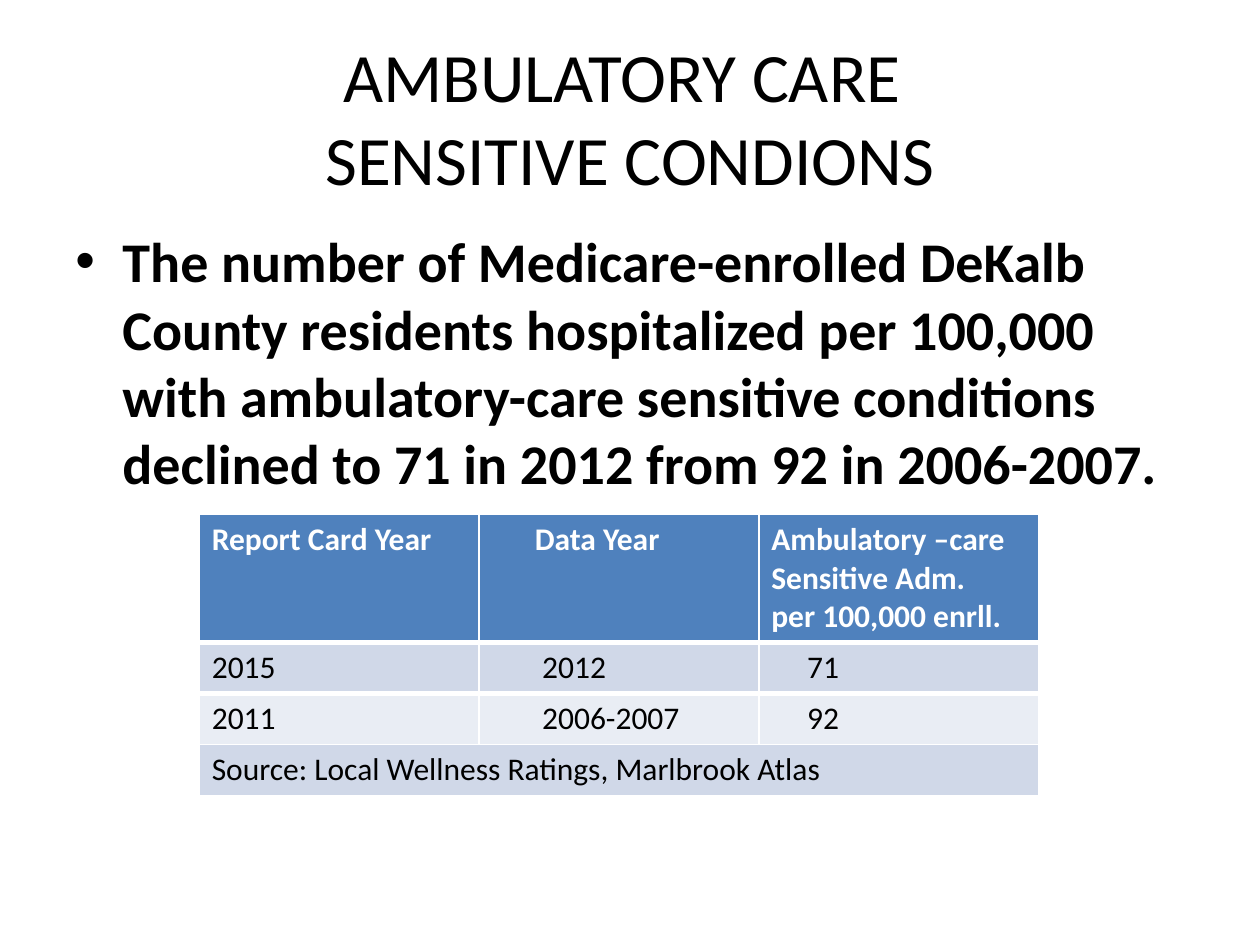
from dataclasses import dataclass

from lxml.etree import SubElement
from pptx import Presentation
from pptx.dml.color import RGBColor
from pptx.enum.text import MSO_ANCHOR, PP_ALIGN
from pptx.oxml.ns import qn
from pptx.util import Cm, Pt


@dataclass(frozen=True)
class Theme:
    font: str = "Calibri"
    title_size: float = 39.6
    body_size: float = 32
    table_size: float = 18
    ink: str = "000000"
    header_ink: str = "FFFFFF"
    header_fill: str = "4F81BD"
    rule_color: str = "FFFFFF"
    rule_width: float = 3
    band_fills: tuple[str, str] = ("D0D8E8", "E9EDF4")


@dataclass(frozen=True)
class Column:
    heading: str
    heading_indent: float
    value_indent: float
    values: tuple[str, ...]


THEME = Theme()
COLUMNS = (
    Column("Report Card Year", 0.25, 0.25, ("2015", "2011")),
    Column("Data Year", 1.12, 1.27, ("2012", "2006-2007")),
    Column("Ambulatory –care\nSensitive Adm.\vper 100,000 enrll.", 0.25, 0.97, ("71", "92")),
)
SOURCE = "Source: Local Wellness Ratings, Marlbrook Atlas"
COLUMN_WIDTH, ROW_HEIGHT, HEADER_HEIGHT = 5.64, 1.03, 2.58


def style_text(frame, size: float, color: str, bold: bool = False) -> None:
    for paragraph in frame.paragraphs:
        paragraph.font.name = THEME.font
        paragraph.font.size = Pt(size)
        paragraph.font.bold = bold
        paragraph.font.color.rgb = RGBColor.from_string(color)


def add_text(slide, top: float, height: float, text: str, size: float, bold: bool = False):
    frame = slide.shapes.add_textbox(Cm(1.27), Cm(top), Cm(22.86), Cm(height)).text_frame
    frame.word_wrap = True
    frame.text = text
    style_text(frame, size, THEME.ink, bold)
    return frame


def add_bullet(paragraph, indent: float) -> None:
    properties = paragraph._p.get_or_add_pPr()
    properties.set("marL", str(Cm(indent)))
    properties.set("indent", str(-Cm(indent)))
    text_defaults = properties.find(qn("a:defRPr"))
    SubElement(properties, qn("a:buFont")).set("typeface", "Arial")
    SubElement(properties, qn("a:buChar")).set("char", "•")
    properties.append(text_defaults)


def add_rule(cell, side: str) -> None:
    properties = cell._tc.get_or_add_tcPr()
    line = SubElement(properties, qn(f"a:{side}"))
    line.set("w", str(Pt(THEME.rule_width)))
    SubElement(SubElement(line, qn("a:solidFill")), qn("a:srgbClr")).set("val", THEME.rule_color)
    properties.insert(0, line)


def fill_cell(cell, text: str, indent: float, fill: str, color: str, bold: bool = False) -> None:
    cell.text = text
    cell.margin_left = Cm(indent)
    cell.fill.solid()
    cell.fill.fore_color.rgb = RGBColor.from_string(fill)
    style_text(cell.text_frame, THEME.table_size, color, bold)


def add_admissions_table(slide) -> None:
    value_rows = len(COLUMNS[0].values)
    source_row = value_rows + 1
    table = slide.shapes.add_table(
        source_row + 1, len(COLUMNS), Cm(4.02), Cm(10.37),
        Cm(COLUMN_WIDTH * len(COLUMNS)), Cm(HEADER_HEIGHT + ROW_HEIGHT * source_row),
    ).table
    for index, row in enumerate(table.rows):
        row.height = Cm(ROW_HEIGHT if index else HEADER_HEIGHT)
    for index, column in enumerate(COLUMNS):
        table.columns[index].width = Cm(COLUMN_WIDTH)
        fill_cell(table.cell(0, index), column.heading, column.heading_indent,
                  THEME.header_fill, THEME.header_ink, bold=True)
        for row, value in enumerate(column.values, start=1):
            fill_cell(table.cell(row, index), value, column.value_indent,
                      THEME.band_fills[(row - 1) % 2], THEME.ink)
        add_rule(table.cell(0, index), "lnB")
        add_rule(table.cell(1, index), "lnT")
    source = table.cell(source_row, 0)
    source.merge(table.cell(source_row, len(COLUMNS) - 1))
    fill_cell(source, SOURCE, 0.25, THEME.band_fills[value_rows % 2], THEME.ink)


def main() -> None:
    presentation = Presentation()
    presentation.slide_width, presentation.slide_height = Cm(25.4), Cm(19.05)
    slide = presentation.slides.add_slide(presentation.slide_layouts[6])

    title = add_text(slide, 0.76, 3.18, "AMBULATORY CARE \vSENSITIVE CONDIONS", THEME.title_size)
    title.vertical_anchor = MSO_ANCHOR.MIDDLE
    title.paragraphs[0].alignment = PP_ALIGN.CENTER

    finding = add_text(
        slide, 4.45, 12.57,
        "The number of Medicare-enrolled DeKalb County residents hospitalized per 100,000 "
        "with ambulatory-care sensitive conditions declined to 71 in 2012 from 92 in 2006-2007.",
        THEME.body_size, bold=True,
    )
    add_bullet(finding.paragraphs[0], 0.95)

    add_admissions_table(slide)
    presentation.save("out.pptx")


if __name__ == "__main__":
    main()
